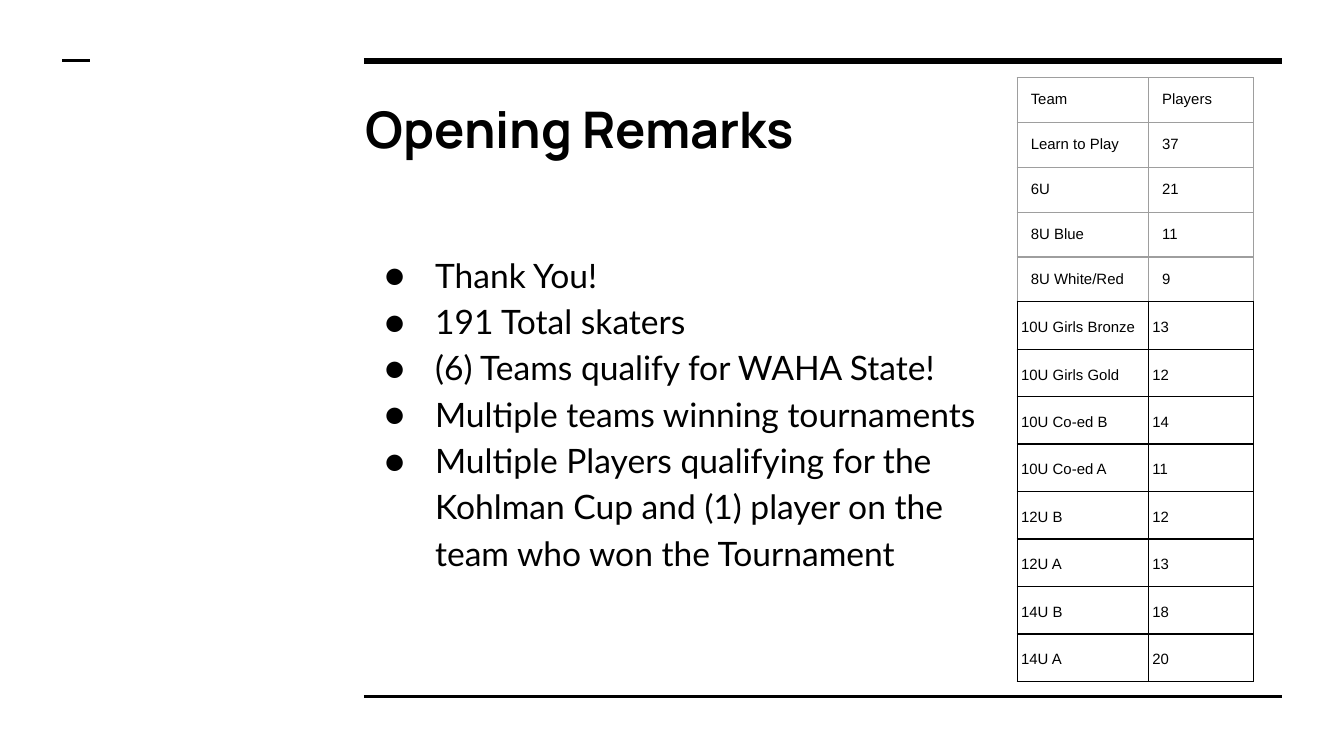
from dataclasses import dataclass

from lxml.etree import SubElement
from pptx import Presentation
from pptx.dml.color import RGBColor
from pptx.enum.shapes import MSO_CONNECTOR as Connector
from pptx.enum.text import MSO_ANCHOR as Anchor
from pptx.oxml.ns import qn
from pptx.util import Pt


@dataclass(frozen=True)
class Theme:
    ink: str = "000000"
    grid: str = "9E9E9E"
    paper: str = "FFFFFF"
    title_font: str = "Manrope"
    body_font: str = "Lato"
    table_font: str = "Arial"
    title_size: float = 27
    body_size: float = 18
    table_size: float = 8
    spacing: float = 1.15
    inset: float = 7.2
    tight_inset: float = 2


class SlideBuilder:
    def __init__(self, slide, theme):
        self.slide = slide
        self.theme = theme
        fill = slide.background.fill
        fill.solid()
        fill.fore_color.rgb = RGBColor.from_string(theme.paper)

    def rule(self, left, right, y, weight):
        line = self.slide.shapes.add_connector(
            Connector.STRAIGHT, Pt(left), Pt(y), Pt(right), Pt(y))
        line.line.color.rgb = RGBColor.from_string(self.theme.ink)
        line.line.width = Pt(weight)
        SubElement(line._element.spPr, qn("a:effectLst"))

    def run(self, paragraph, text, font_name, size, bold=False):
        run = paragraph.add_run()
        run.text = text
        run.font.name = font_name
        run.font.size = Pt(size)
        run.font.bold = bold
        run.font.color.rgb = RGBColor.from_string(self.theme.ink)

    def text_frame(self, left, top, width, height):
        box = self.slide.shapes.add_textbox(Pt(left), Pt(top), Pt(width), Pt(height))
        frame = box.text_frame
        frame.word_wrap = True
        frame.margin_left = frame.margin_right = Pt(self.theme.inset)
        frame.margin_top = frame.margin_bottom = Pt(self.theme.inset)
        return frame

    def title(self, text, *area):
        frame = self.text_frame(*area)
        self.run(frame.paragraphs[0], text, self.theme.title_font,
                 self.theme.title_size, bold=True)

    def bullets(self, items, *area):
        frame = self.text_frame(*area)
        for index, item in enumerate(items):
            paragraph = frame.add_paragraph() if index else frame.paragraphs[0]
            properties = paragraph._p.get_or_add_pPr()
            properties.set("marL", str(Pt(36)))
            properties.set("indent", str(-Pt(27)))
            color = SubElement(properties, qn("a:buClr"))
            SubElement(color, qn("a:srgbClr"), val=self.theme.ink)
            SubElement(properties, qn("a:buFont"), typeface=self.theme.body_font)
            SubElement(properties, qn("a:buChar"), char="●")
            paragraph.line_spacing = self.theme.spacing
            self.run(paragraph, item, self.theme.body_font, self.theme.body_size)

    def borders(self, cell, color, weight, bottom=None):
        properties = cell._tc.get_or_add_tcPr()
        for side in "LRTB":
            side_color, side_weight = (
                bottom if side == "B" and bottom else (color, weight))
            line = SubElement(properties, qn(f"a:ln{side}"), w=str(Pt(side_weight)))
            fill = SubElement(line, qn("a:solidFill"))
            SubElement(fill, qn("a:srgbClr"), val=side_color)

    def table(self, rows, left, top, widths, light_rows, light_height, dark_height):
        theme = self.theme
        heights = [light_height if index < light_rows else dark_height
                   for index in range(len(rows))]
        table = self.slide.shapes.add_table(
            len(rows), len(widths), Pt(left), Pt(top),
            Pt(sum(widths)), Pt(sum(heights))).table
        table.first_row = table.horz_banding = False
        for column, width in zip(table.columns, widths):
            column.width = Pt(width)
        light, dark = (theme.grid, 0.75), (theme.ink, 0.83)
        for row_index, values in enumerate(rows):
            table.rows[row_index].height = Pt(heights[row_index])
            is_light = row_index < light_rows
            side_inset = theme.inset if is_light else theme.tight_inset
            for column_index, value in enumerate(values):
                cell = table.cell(row_index, column_index)
                bottom = dark if row_index == light_rows - 1 else None
                self.borders(cell, *(light if is_light else dark), bottom=bottom)
                cell.fill.background()
                cell.margin_left = cell.margin_right = Pt(side_inset)
                cell.margin_top = cell.margin_bottom = Pt(theme.inset)
                cell.vertical_anchor = Anchor.TOP if is_light else Anchor.BOTTOM
                paragraph = cell.text_frame.paragraphs[0]
                if not is_light:
                    paragraph.line_spacing = theme.spacing
                self.run(paragraph, value, theme.table_font, theme.table_size)


REMARKS = [
    "Thank You!",
    "191 Total skaters",
    "(6) Teams qualify for WAHA State!",
    "Multiple teams winning tournaments",
    "Multiple Players qualifying for the Kohlman Cup and (1) player on the "
    "team who won the Tournament",
]

TEAMS = [
    ("Team", "Players"),
    ("Learn to Play", "37"),
    ("6U", "21"),
    ("8U Blue", "11"),
    ("8U White/Red", "9"),
    ("10U Girls Bronze", "13"),
    ("10U Girls Gold", "12"),
    ("10U Co-ed B", "14"),
    ("10U Co-ed A", "11"),
    ("12U B", "12"),
    ("12U A", "13"),
    ("14U B", "18"),
    ("14U A", "20"),
]


def main():
    presentation = Presentation()
    presentation.slide_width, presentation.slide_height = Pt(720), Pt(405)
    slide = presentation.slides.add_slide(presentation.slide_layouts[6])
    builder = SlideBuilder(slide, Theme())

    # Frame rules
    builder.rule(195, 687, 32.6, 3)
    builder.rule(195, 687, 373, 1.5)
    builder.rule(33.5, 48, 32.6, 1.5)

    # Heading and remarks
    builder.title("Opening Remarks", 188.8, 45.4, 497.5, 49.7)
    builder.bullets(REMARKS, 190, 126, 350, 236)

    # Team sizes: the youngest groups have light borders
    builder.table(TEAMS, 545, 41.6, (70.4, 56.2), light_rows=5,
                  light_height=23.4, dark_height=24.7)

    presentation.save("out.pptx")


if __name__ == "__main__":
    main()
